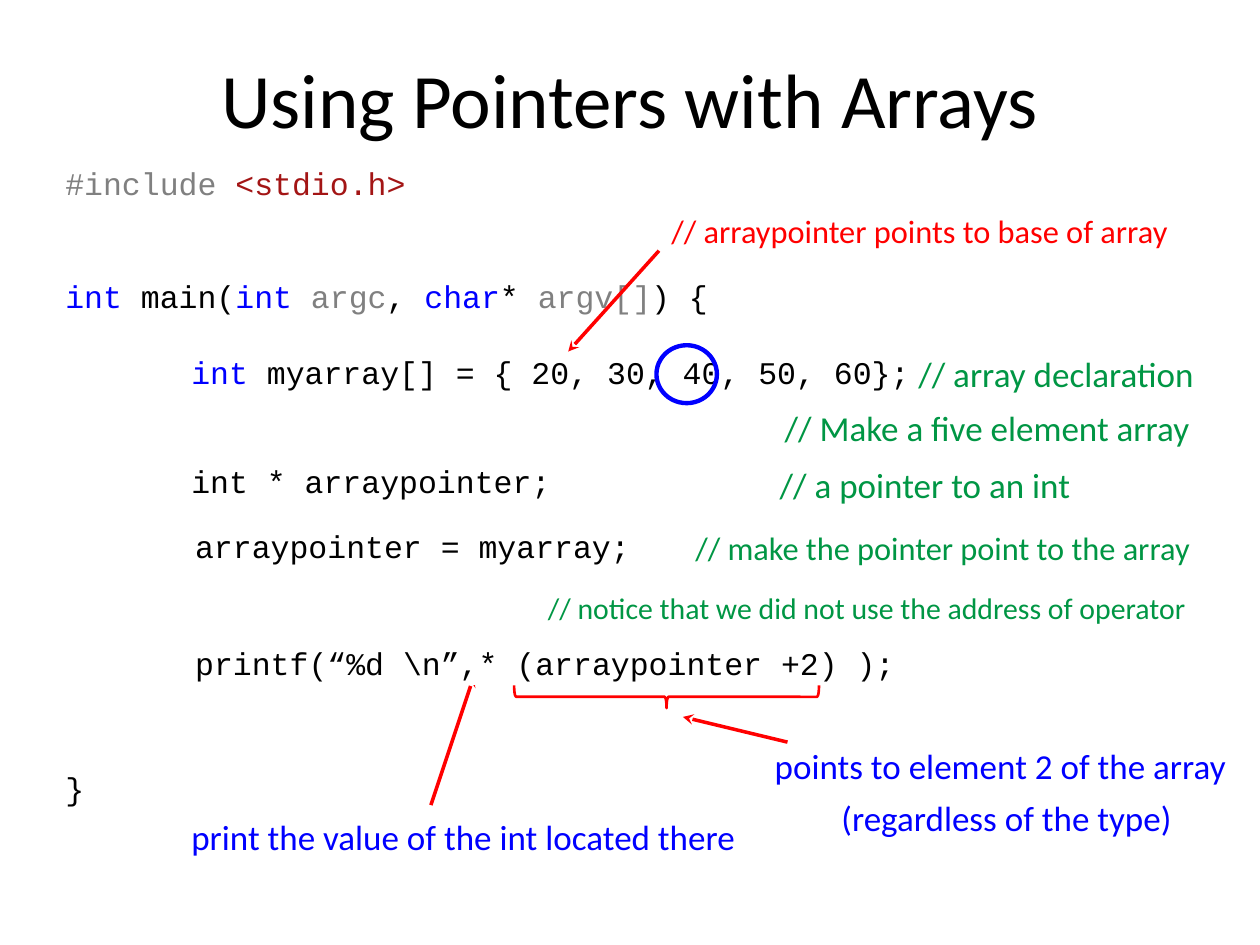
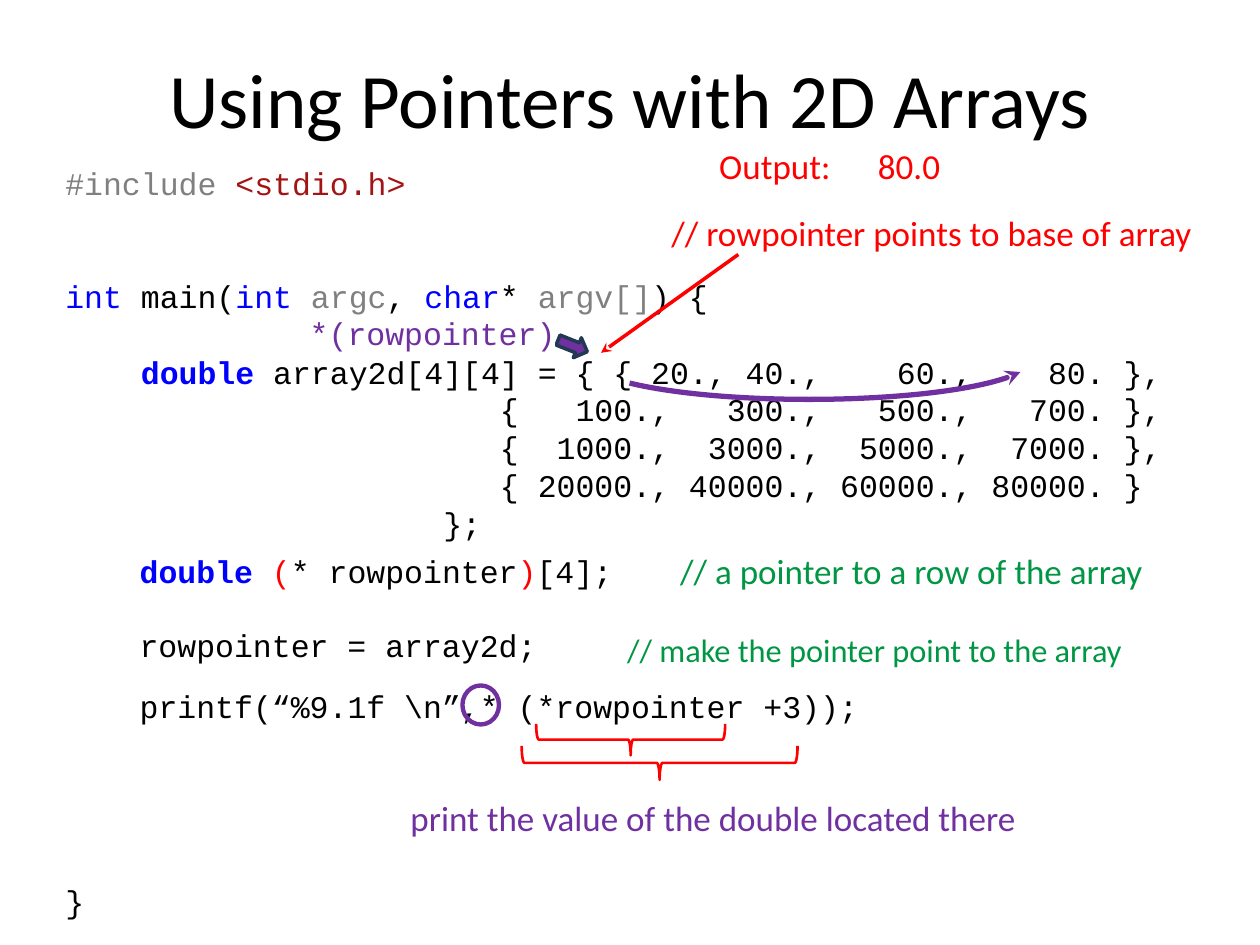
from dataclasses import dataclass
from functools import singledispatch

from lxml.etree import SubElement
from pptx import Presentation
from pptx.dml.color import RGBColor
from pptx.enum.shapes import MSO_CONNECTOR, MSO_SHAPE
from pptx.enum.text import MSO_ANCHOR, PP_ALIGN
from pptx.oxml.ns import qn
from pptx.util import Emu, Inches, Pt


@dataclass(frozen=True)
class Theme:
    sans: str = "Calibri"
    mono: str = "Courier New"
    ink: str = "000000"
    paper: str = "FFFFFF"
    gray: str = "808080"
    header: str = "A31515"
    blue: str = "0000FF"
    green: str = "009644"
    red: str = "FF0000"
    purple: str = "7030A0"
    navy: str = "233953"
    title: float = 44
    note: float = 20
    note_tight: float = 18.5
    note_small: float = 17
    code: float = 18
    code_pitch: float = 21.6


T = Theme()

# Grid: 100 columns by 75 rows over the slide
WIDTH, HEIGHT = Inches(10), Inches(7.5)
COL, ROW = WIDTH / 100, HEIGHT / 75
CHAR = Inches(0.15)  # advance of one code character


def cols(n: float) -> Emu:
    return Emu(round(n * COL))


def rows(n: float) -> Emu:
    return Emu(round(n * ROW))


@dataclass(frozen=True)
class Box:
    x: float
    y: float
    w: float
    h: float

    def emu(self) -> tuple[Emu, Emu, Emu, Emu]:
        return cols(self.x), rows(self.y), cols(self.w), rows(self.h)


@dataclass(frozen=True)
class Span:
    text: str
    color: str = T.ink
    bold: bool = False


@dataclass(frozen=True)
class Line:
    spans: tuple[Span, ...]
    blank_before: int = 0
    stops: tuple[tuple[float, str], ...] = ()  # (characters, "l" or "r")


@dataclass(frozen=True)
class Listing:
    box: Box
    lines: tuple[Line, ...]


@dataclass(frozen=True)
class Code:
    box: Box
    spans: tuple[Span, ...]


@dataclass(frozen=True)
class Note:
    box: Box
    text: str
    color: str
    size: float = T.note
    stops: tuple[tuple[float, str], ...] = ()


@dataclass(frozen=True)
class Arrow:
    start: tuple[float, float]
    end: tuple[float, float]
    color: str = T.red
    width: float = 2


@dataclass(frozen=True)
class Mark:
    box: Box
    kind: MSO_SHAPE
    color: str
    width: float
    fill: str = ""
    rotation: float = 0
    adjust: tuple[float, ...] = ()
    head: bool = False


# Text helpers
def style(font, name: str, size: float, color: str, bold: bool = False) -> None:
    font.name, font.size, font.bold = name, Pt(size), bold
    font.color.rgb = RGBColor.from_string(color)


def highlight(r) -> None:
    rPr = r.font._element if hasattr(r.font, "_element") else r._r.get_or_add_rPr()
    mark = SubElement(rPr, qn("a:highlight"))
    SubElement(mark, qn("a:srgbClr")).set("val", T.paper)
    rPr.find(qn("a:solidFill")).addnext(mark)


def text_frame(slide, box: Box):
    tf = slide.shapes.add_textbox(*box.emu()).text_frame
    tf.word_wrap = True
    return tf


def write(p, spans: tuple[Span, ...], name: str, size: float, stops=()) -> None:
    if stops:
        tabs = SubElement(p._p.get_or_add_pPr(), qn("a:tabLst"))
        for at, align in stops:
            tab = SubElement(tabs, qn("a:tab"))
            tab.set("pos", str(round(at * CHAR)))
            tab.set("algn", align)
    p.font.name, p.font.size = name, Pt(size)
    for span in spans:
        r = p.add_run()
        r.text = span.text
        style(r.font, name, size, span.color, span.bold)
        if name == T.mono:
            highlight(r)


# Drawing, one function for each kind of element
@singledispatch
def draw(item, slide) -> None:
    raise TypeError(item)


@draw.register(Listing)
def draw_listing(item: Listing, slide) -> None:
    tf = text_frame(slide, item.box)
    for i, line in enumerate(item.lines):
        p = tf.add_paragraph() if i else tf.paragraphs[0]
        p.line_spacing = Pt(T.code_pitch)
        p.space_before = Pt(T.code_pitch * line.blank_before)
        write(p, line.spans, T.mono, T.code, line.stops)


@draw.register(Code)
def draw_code(item: Code, slide) -> None:
    write(text_frame(slide, item.box).paragraphs[0], item.spans, T.mono, T.code)


@draw.register(Note)
def draw_note(item: Note, slide) -> None:
    p = text_frame(slide, item.box).paragraphs[0]
    write(p, (Span(item.text, item.color),), T.sans, item.size, item.stops)


@draw.register(Arrow)
def draw_arrow(item: Arrow, slide) -> None:
    (x1, y1), (x2, y2) = item.start, item.end
    line = slide.shapes.add_connector(
        MSO_CONNECTOR.STRAIGHT, cols(x1), rows(y1), cols(x2), rows(y2))
    line.line.color.rgb = RGBColor.from_string(item.color)
    line.line.width = Pt(item.width)
    SubElement(line.line._get_or_add_ln(), qn("a:tailEnd")).set("type", "stealth")
    SubElement(line._element.spPr, qn("a:effectLst"))


@draw.register(Mark)
def draw_mark(item: Mark, slide) -> None:
    sp = slide.shapes.add_shape(item.kind, *item.box.emu())
    sp.shadow.inherit = False
    sp.rotation = item.rotation
    for i, value in enumerate(item.adjust):
        sp.adjustments[i] = value
    if item.fill:
        sp.fill.solid()
        sp.fill.fore_color.rgb = RGBColor.from_string(item.fill)
    else:
        sp.fill.background()
    sp.line.color.rgb = RGBColor.from_string(item.color)
    sp.line.width = Pt(item.width)
    if item.head:
        SubElement(sp.line._get_or_add_ln(), qn("a:headEnd")).set("type", "stealth")


def draw_title(slide, text: str) -> None:
    tf = text_frame(slide, Box(5, 3, 90, 9.5))
    tf.vertical_anchor = MSO_ANCHOR.MIDDLE
    p = tf.paragraphs[0]
    p.alignment = PP_ALIGN.CENTER
    write(p, (Span(text),), T.sans, T.title)


# Shorthands for recurring elements
def code(x: float, y: float, w: float, *spans: Span) -> Code:
    return Code(Box(x, y, w, 4), spans)


def note(x: float, y: float, w: float, text: str, color: str = T.green,
         size: float = T.note) -> Note:
    return Note(Box(x, y, w, 5), text, color, size)


def brace(x: float, y: float, w: float, h: float) -> Mark:
    return Mark(Box(x, y, w, h), MSO_SHAPE.RIGHT_BRACE, T.red, 1.5, rotation=90)


def ring(x: float, y: float, w: float, h: float, color: str) -> Mark:
    return Mark(Box(x, y, w, h), MSO_SHAPE.OVAL, color, 2.5)


# Code shared by both slides
PROLOGUE = (
    Line((Span("#include", T.gray), Span(" "), Span("<stdio.h>", T.header))),
    Line((Span("int", T.blue), Span(" main("), Span("int", T.blue), Span(" "),
          Span("argc", T.gray), Span(", "), Span("char", T.blue), Span("* "),
          Span("argv[]", T.gray), Span(") {")), blank_before=2),
)


def closing(blank: int) -> Line:
    return Line((Span("}"),), blank)


# Right-aligned number columns of the 2D array
NUMBER_STOPS = ((40, "r"), (48, "r"), (58, "r"))
ROW_STOPS = ((23, "l"), (32, "r"), *NUMBER_STOPS)
LAST_ROW_STOPS = (*ROW_STOPS[:-1], (57, "r"))

ARRAYS = (
    Listing(Box(4.2, 12.5, 70, 52.5), (
        *PROLOGUE,
        Line((Span("\tint", T.blue), Span(" myarray[] = { 20, 30, 40, 50, 60};")),
             1, ((20 / 3, "l"),)),
        closing(10))),
    note(61.3, 31.8, 35, "// Make a five element array"),
    note(71.9, 27.5, 26.7, "// array declaration"),
    note(60.9, 36.3, 26.7, "// a pointer to an int"),
    note(54.2, 41.4, 44.4, "// make the pointer point to the array", size=T.note_tight),
    note(42.5, 46.3, 56, "// notice that we did not use the address of operator",
         size=T.note_small),
    note(60.5, 58.6, 38.3, "points to element 2 of the array", T.blue),
    note(52.3, 16.3, 43.5, "// arraypointer points to base of array", T.red, T.note_tight),
    Arrow((34.2, 63.9), (37.6, 53.7)),
    Arrow((52.3, 19.9), (45.1, 27.9)),
    Arrow((62.5, 58.9), (54.2, 56.9)),
    code(14.2, 36.2, 33.6, Span("int * arraypointer;")),
    code(14.5, 41.3, 37.7, Span("arraypointer = myarray;")),
    code(14.5, 50.6, 58.1, Span("printf(“%d \\n”,* (arraypointer +2) );")),
    brace(52, 43.2, 1.8, 24.2),
    note(14.2, 64.2, 47, "print the value of the int located there", T.blue),
    ring(52.1, 27.4, 4.8, 4.6, T.blue),
    note(65.8, 62.7, 30, "(regardless of the type)", T.blue),
)

ARRAYS_2D = (
    Listing(Box(4.2, 12.5, 90, 61.6), (
        *PROLOGUE,
        Line((Span("\tdouble ", T.blue, True),
              Span("array2d[4][4] = { { 20.,\t40.,\t60.,\t80. },")),
             1, ((4, "l"), *NUMBER_STOPS)),
        Line((Span("\t{\t100.,\t300.,\t500.,\t700. },"),), stops=ROW_STOPS),
        Line((Span("\t{\t1000.,\t3000.,\t5000.,\t7000. },"),), stops=ROW_STOPS),
        Line((Span("\t{\t20000.,\t40000.,\t60000.,\t80000. }"),), stops=LAST_ROW_STOPS),
        Line((Span("\t};"),), stops=((20, "l"),)),
        closing(9))),
    note(53, 43.1, 43.5, "// a pointer to a row of the array"),
    note(48.8, 49.5, 44.4, "// make the pointer point to the array", size=T.note_tight),
    note(52.3, 16.3, 43.5, "// rowpointer points to base of array", T.red),
    Arrow((58.6, 20.2), (47.7, 28)),
    code(10.1, 43.3, 42.5, Span("double", T.blue, True), Span(" "), Span("(", T.red),
         Span("* rowpointer"), Span(")", T.red), Span("[4];")),
    code(10.1, 49.2, 37.7, Span("rowpointer = array2d;")),
    code(10.1, 54, 70.8, Span("printf(“%9.1f \\n”,* (*rowpointer +3));")),
    brace(48.8, 51.2, 2.5, 15),
    note(31.6, 62.7, 54, "print the value of the double located there", T.purple),
    ring(36.7, 54.4, 2.9, 3.1, T.purple),
    Mark(Box(44.2, 26.6, 2.5, 1.7), MSO_SHAPE.RIGHT_ARROW, T.navy, 2, T.purple, 21.8),
    code(23.6, 24.4, 21.8, Span("*(rowpointer)", T.purple)),
    brace(51, 49.6, 2.7, 21.9),
    Mark(Box(46.4, 25.2, 35.6, 6.5), MSO_SHAPE.ARC, T.purple, 3,
         adjust=(2.2, 103.31), head=True),
    Note(Box(56.1, 11, 25.9, 5), "Output:\t80.0", T.red, stops=((8.4, "l"),)),
)


def main() -> None:
    prs = Presentation()
    prs.slide_width, prs.slide_height = WIDTH, HEIGHT
    for title, items in (("Using Pointers with Arrays", ARRAYS),
                         ("Using Pointers with 2D Arrays", ARRAYS_2D)):
        slide = prs.slides.add_slide(prs.slide_layouts[6])
        draw_title(slide, title)
        for item in items:
            draw(item, slide)
    prs.save("out.pptx")


if __name__ == "__main__":
    main()
